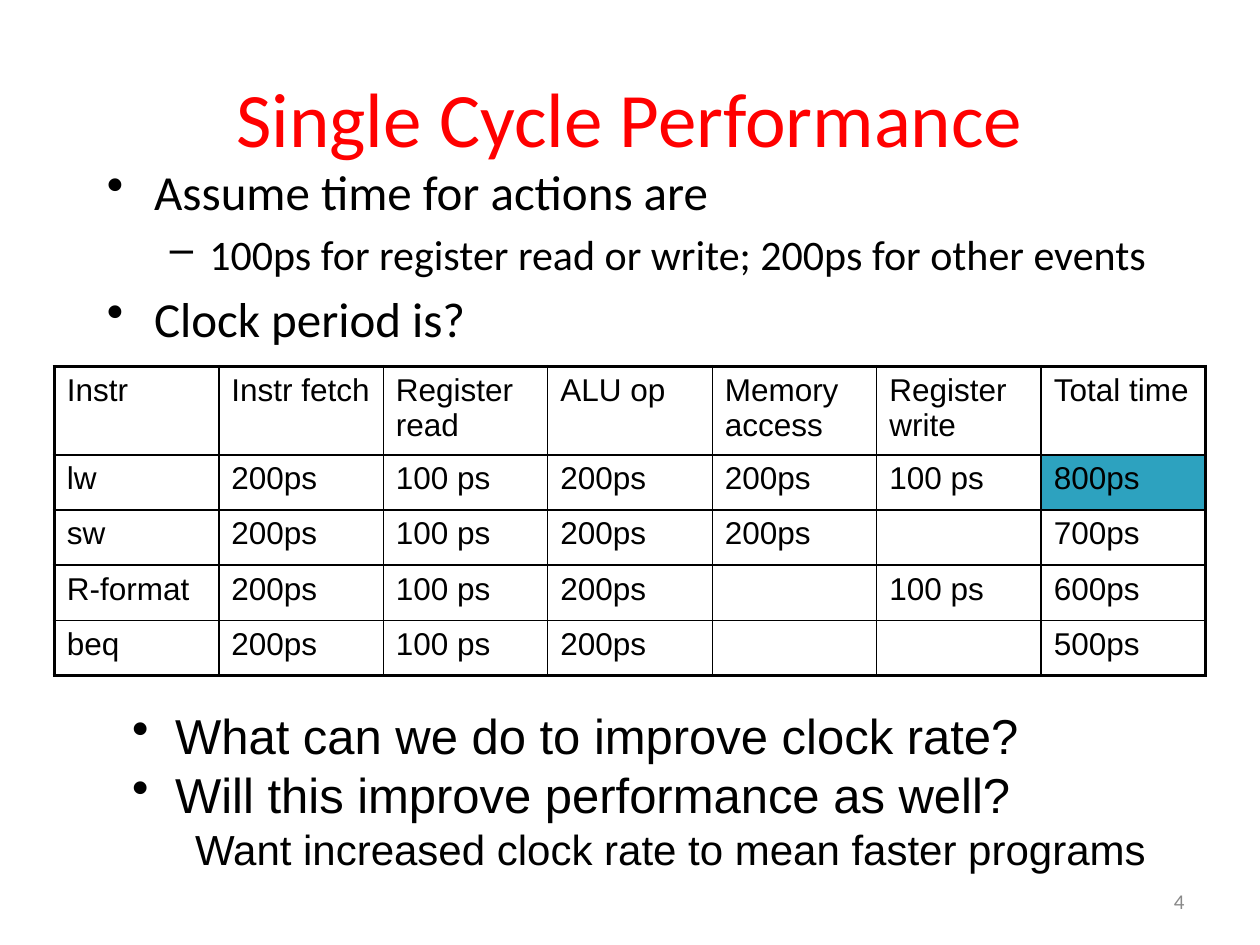
import pptx
import pptx.util
import pptx.dml.color
import pptx.enum.text
import pptx.oxml.ns
import lxml.etree

Pt = pptx.util.Pt
RGBColor = pptx.dml.color.RGBColor
PP_ALIGN = pptx.enum.text.PP_ALIGN
MSO_ANCHOR = pptx.enum.text.MSO_ANCHOR
qn = pptx.oxml.ns.qn

RED = RGBColor(0xFF, 0x00, 0x00)
BLACK = RGBColor(0x00, 0x00, 0x00)
GREY = RGBColor(0x89, 0x89, 0x89)
TEAL = RGBColor(0x2D, 0xA2, 0xBF)


def add_text(slide, box, font, color, paragraphs, align=PP_ALIGN.LEFT, anchor=MSO_ANCHOR.TOP):
    """Add a text box; each paragraph is (text, size, bullet, margin, hanging, space before)."""
    tf = slide.shapes.add_textbox(*[Pt(v) for v in box]).text_frame
    tf.word_wrap = True
    tf.vertical_anchor = anchor
    for i, (text, size, bullet, margin, hanging, before) in enumerate(paragraphs):
        p = tf.add_paragraph() if i else tf.paragraphs[0]
        p.text = text
        p.alignment = align
        p.space_before = Pt(before)
        p.font.name, p.font.size, p.font.color.rgb = font, Pt(size), color
        pPr = p._p.get_or_add_pPr()
        pPr.set("marL", str(Pt(margin)))
        pPr.set("indent", str(Pt(-hanging)))
        if bullet:
            # The bullet comes after the spacing and before the run defaults
            bu = lxml.etree.Element(qn("a:buChar"), char=bullet)
            pPr.find(qn("a:defRPr")).addprevious(bu)


def set_border(cell, side, width):
    ln = lxml.etree.SubElement(cell._tc.get_or_add_tcPr(), qn("a:" + side), w=str(Pt(width)))
    fill = lxml.etree.SubElement(ln, qn("a:solidFill"))
    lxml.etree.SubElement(fill, qn("a:srgbClr"), val=str(BLACK))


prs = pptx.Presentation()
prs.slide_width, prs.slide_height = Pt(720), Pt(540)
s = prs.slides.add_slide(prs.slide_layouts[6])

# Title
add_text(s, (36, 21.6, 648, 90), "Calibri", RED,
         [("Single Cycle Performance", 44, None, 0, 0, 0)],
         PP_ALIGN.CENTER, MSO_ANCHOR.MIDDLE)

# Assumptions
add_text(s, (54, 88.5, 651.6, 140.4), "Calibri", BLACK, [
    ("Assume time for actions are", 28, "•", 27, 27, 5.6),
    ("100ps for register read or write; 200ps for other events", 24, "–", 58.5, 22.5, 4.8),
    ("Clock period is?", 28, "•", 27, 27, 5.6),
])

# Instruction timing table
ROWS = [
    ["Instr", "Instr fetch", "Register read", "ALU op", "Memory access", "Register write", "Total time"],
    ["lw", "200ps", "100 ps", "200ps", "200ps", "100 ps", "800ps"],
    ["sw", "200ps", "100 ps", "200ps", "200ps", "", "700ps"],
    ["R-format", "200ps", "100 ps", "200ps", "", "100 ps", "600ps"],
    ["beq", "200ps", "100 ps", "200ps", "", "", "500ps"],
]
HEADER_H, ROW_H, COL_W = 48, 31.6, 94
n_rows, n_cols = len(ROWS), len(ROWS[0])
table = s.shapes.add_table(n_rows, n_cols, Pt(31), Pt(209.4), Pt(COL_W * n_cols),
                           Pt(HEADER_H + ROW_H * (n_rows - 1))).table
table.first_row = table.horz_banding = False
for col in table.columns:
    col.width = Pt(COL_W)
for r, texts in enumerate(ROWS):
    table.rows[r].height = Pt(ROW_H if r else HEADER_H)
    for c, text in enumerate(texts):
        cell = table.cell(r, c)
        cell.text = text
        p = cell.text_frame.paragraphs[0]
        p.space_before = Pt(3.6)
        p.font.name, p.font.size, p.font.color.rgb = "Arial", Pt(18), BLACK
        # Heavy frame, medium rule under the header, thin grid
        set_border(cell, "lnL", 1 if c else 2.25)
        set_border(cell, "lnR", 2.25 if c == n_cols - 1 else 1)
        set_border(cell, "lnT", {0: 2.25, 1: 1.5}.get(r, 1))
        set_border(cell, "lnB", {0: 1.5, n_rows - 1: 2.25}.get(r, 1))
        if text == "800ps":
            cell.fill.solid()
            cell.fill.fore_color.rgb = TEAL
        else:
            cell.fill.background()

# Questions
add_text(s, (68.4, 399.6, 651.6, 140.4), "Arial", BLACK, [
    ("What can we do to improve clock rate?", 28, "•", 24.6, 24.6, 0),
    ("Will this improve performance as well?", 28, "•", 24.6, 24.6, 0),
    ("Want increased clock rate to mean faster programs", 24, None, 36, 0, 0),
])

# Slide number
add_text(s, (516, 500.5, 168, 28.8), "Calibri", GREY,
         [("4", 12, None, 0, 0, 0)], PP_ALIGN.RIGHT, MSO_ANCHOR.MIDDLE)

prs.save("out.pptx")
